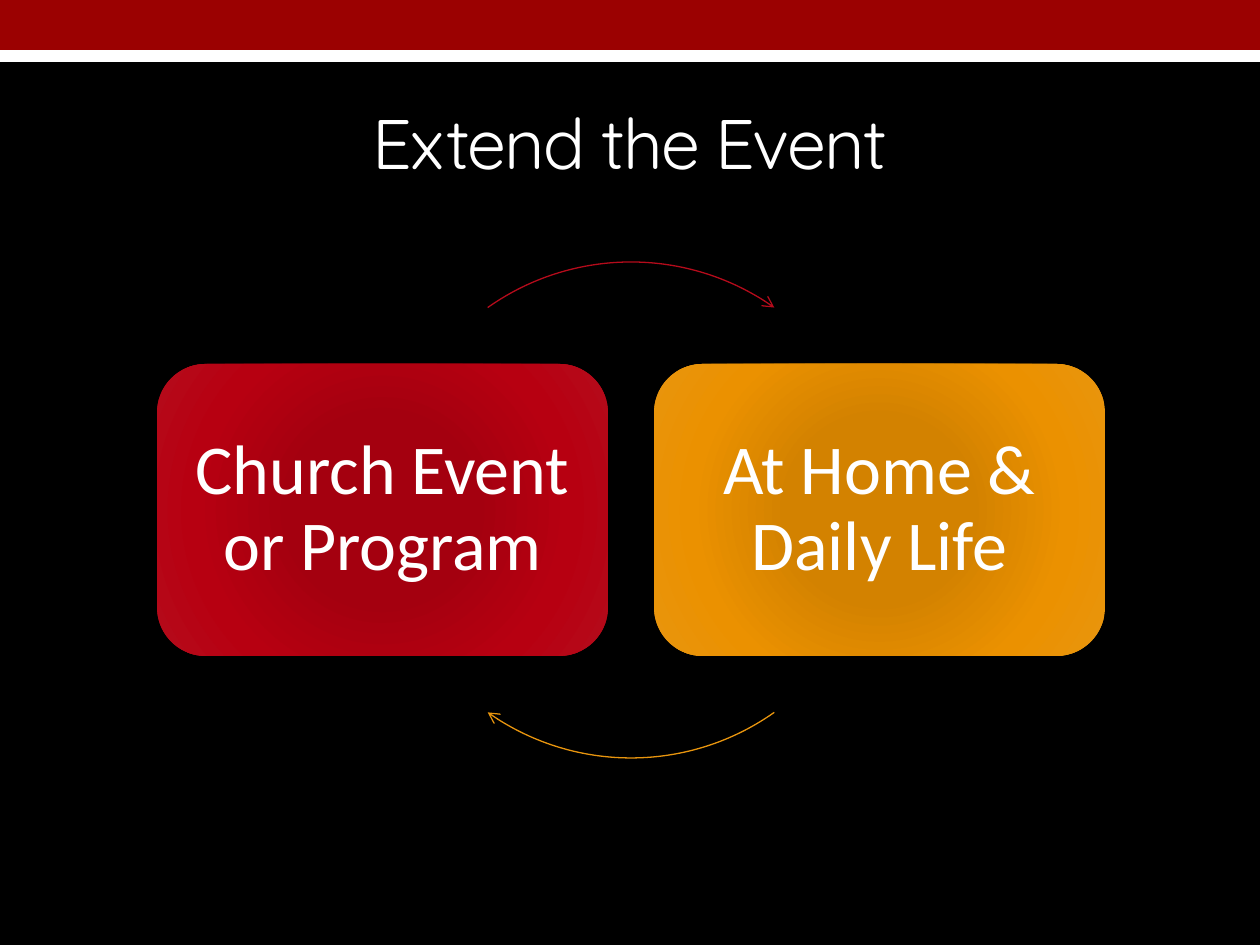
from lxml import etree
from pptx import Presentation
from pptx.dml.color import RGBColor
from pptx.enum.shapes import MSO_SHAPE
from pptx.enum.text import MSO_ANCHOR, PP_ALIGN
from pptx.oxml import parse_xml
from pptx.oxml.ns import nsdecls, qn
from pptx.util import Pt

RECT, ROUNDED, ARC = MSO_SHAPE.RECTANGLE, MSO_SHAPE.ROUNDED_RECTANGLE, MSO_SHAPE.ARC
CENTER, MIDDLE = PP_ALIGN.CENTER, MSO_ANCHOR.MIDDLE
PX = 914400 // 126
TITLE_ONLY = 5

# Content
TITLE = "Extend the Event"
BANDS = [("FFFFFF", 30, 32), ("9B0101", 0, 50)]  # colour, top, height
CARDS = [  # text, gradient from centre to edge, middle angle of the arrow
    ("Church Event or Program", ("A4000F", "B70011", "B50B1B"), 270),
    ("At Home & Daily Life", ("D38200", "EB9100", "E8950E"), 90),
]

# Layout in px
SLIDE_W, SLIDE_H = 1260, 945
CARD_LEFT, CARD_TOP, CARD_W, CARD_H, CARD_GAP = 157, 364, 451, 292, 46
CARD_MARGIN = 21
CYCLE_BOX = (383, 262, 496, 496)
HALF_SWEEP = 35.3  # degrees either side of an arrow's middle


def color(hex_string):
    return RGBColor.from_string(hex_string)


def add_shape(slide, kind, left, top, width, height):
    shape = slide.shapes.add_shape(kind, *(n * PX for n in (left, top, width, height)))
    shape.shadow.inherit = False
    return shape


def fill_radial(shape, colors):
    inner, middle, outer = colors
    stops = "".join(
        f'<a:gs pos="{percent * 1000}"><a:srgbClr val="{value}"/></a:gs>'
        for percent, value in ((0, inner), (34, inner), (70, middle), (100, outer))
    )
    gradient = parse_xml(
        f'<a:gradFill {nsdecls("a")} rotWithShape="1"><a:gsLst>{stops}</a:gsLst>'
        '<a:path path="circle">'
        '<a:fillToRect l="100000" t="100000" r="100000" b="100000"/>'
        "</a:path></a:gradFill>"
    )
    shape._element.spPr.find(qn("a:prstGeom")).addnext(gradient)


def write(paragraph, text, font_name):
    paragraph.alignment = CENTER
    run = paragraph.add_run()
    run.text = text
    run.font.name = font_name
    run.font.size = Pt(40)
    run.font.color.rgb = color("FFFFFF")
    return run


def add_card(slide, left, text, colors):
    card = add_shape(slide, ROUNDED, left, CARD_TOP, CARD_W, CARD_H)
    fill_radial(card, colors)
    card.line.fill.background()
    frame = card.text_frame
    frame.word_wrap = True
    frame.vertical_anchor = MIDDLE
    frame.margin_left = frame.margin_right = CARD_MARGIN * PX
    frame.margin_top = frame.margin_bottom = CARD_MARGIN * PX
    frame.paragraphs[0].line_spacing = 0.9
    write(frame.paragraphs[0], text, "Calibri")


def add_cycle_arrow(slide, middle_angle, line_color):
    arrow = add_shape(slide, ARC, *CYCLE_BOX)
    # Arc angles count 60000 per degree; adjustments are in units of 100000
    arrow.adjustments[0] = (middle_angle - HALF_SWEEP) * 0.6
    arrow.adjustments[1] = (middle_angle + HALF_SWEEP) * 0.6
    arrow.fill.background()
    arrow.line.color.rgb = color(line_color)
    arrow.line.width = Pt(0.75)
    etree.SubElement(arrow.line._get_or_add_ln(), qn("a:tailEnd"), type="arrow")


def main():
    prs = Presentation()
    prs.slide_width, prs.slide_height = SLIDE_W * PX, SLIDE_H * PX
    slide = prs.slides.add_slide(prs.slide_layouts[TITLE_ONLY])
    slide.background.fill.solid()
    slide.background.fill.fore_color.rgb = color("000000")

    # Header bands
    for band_color, top, height in BANDS:
        band = add_shape(slide, RECT, 0, top, SLIDE_W, height)
        band.fill.solid()
        band.fill.fore_color.rgb = color(band_color)
        band.line.fill.background()

    # Cards, each with its arrow to the other
    for i, (text, colors, middle_angle) in enumerate(CARDS):
        add_card(slide, CARD_LEFT + i * (CARD_W + CARD_GAP), text, colors)
        add_cycle_arrow(slide, middle_angle, colors[-1])

    # Title
    title = slide.shapes.title
    title.left, title.top, title.width, title.height = (
        n * PX for n in (63, 73, 1134, 136)
    )
    title.text_frame.vertical_anchor = MIDDLE
    run = write(title.text_frame.paragraphs[0], TITLE, "Quicksand")
    run.font._element.set("spc", "-100")

    prs.save("out.pptx")


if __name__ == "__main__":
    main()
